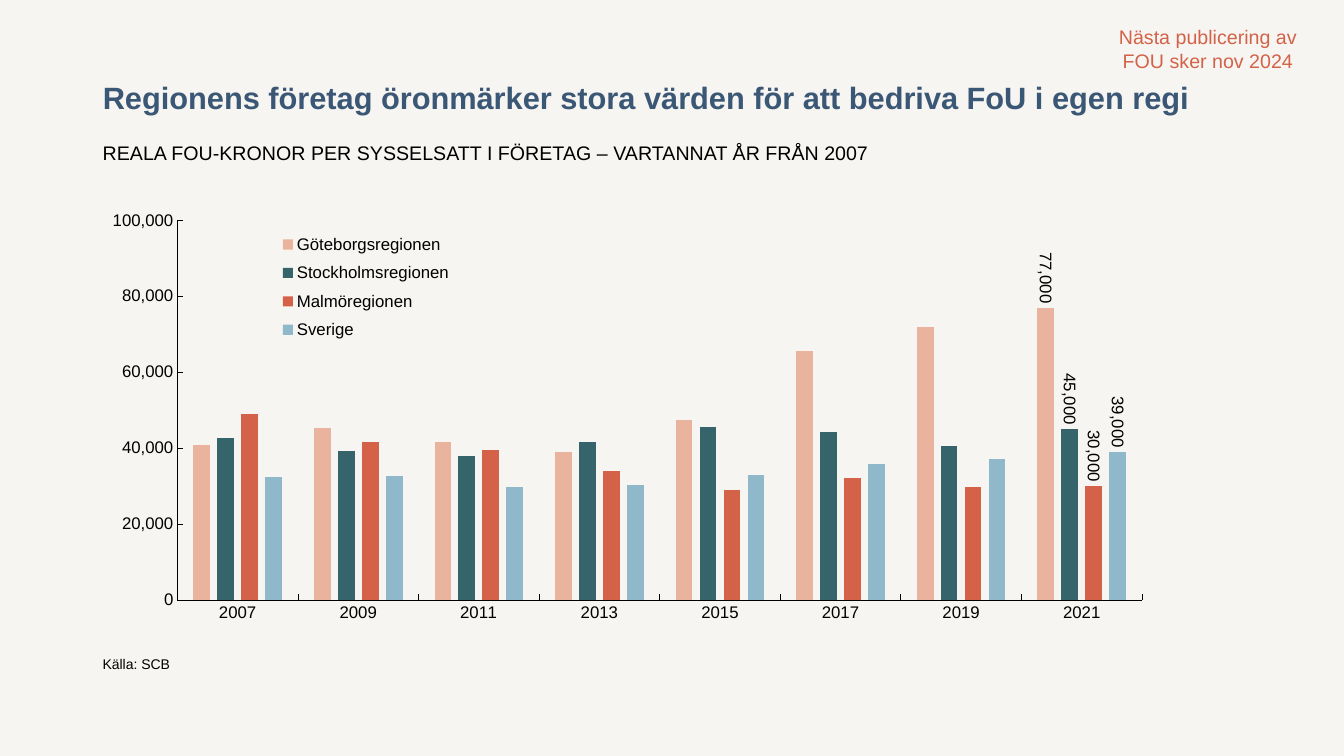
from lxml.etree import SubElement
from pptx import Presentation
from pptx.chart.data import CategoryChartData
from pptx.dml.color import RGBColor
from pptx.enum.chart import XL_CHART_TYPE, XL_LABEL_POSITION, XL_LEGEND_POSITION, XL_TICK_MARK
from pptx.enum.text import MSO_ANCHOR, MSO_AUTO_SIZE, PP_ALIGN
from pptx.oxml.ns import qn
from pptx.util import Inches, Pt

COLORS = {
    "background": "F6F5F1",
    "heading": "3B5776",
    "text": "000000",
    "Göteborgsregionen": "EAB39E",
    "Stockholmsregionen": "36646B",
    "Malmöregionen": "D36248",
    "Sverige": "8FB8CA",
}
YEARS = [str(year) for year in range(2007, 2022, 2)]
RND_PER_EMPLOYEE = {
    "Göteborgsregionen": (40829, 45243, 41458, 38942, 47379, 65492, 71788, 77000),
    "Stockholmsregionen": (42623, 39287, 37840, 41703, 45497, 44212, 40608, 45000),
    "Malmöregionen": (48859, 41520, 39418, 33877, 28856, 32075, 29826, 30000),
    "Sverige": (32275, 32748, 29726, 30148, 32855, 35767, 36974, 39000),
}
LEFT = 6.9  # shared left edge, percent of the slide's width


def color(name):
    return RGBColor.from_string(COLORS[name])


def set_layout(parent, position, **shares):
    """Place a chart part by shares of the chart; position is its child index."""
    layout = parent.find(qn("c:layout"))
    if layout is not None:
        parent.remove(layout)
    layout = SubElement(parent, qn("c:layout"))
    parent.insert(position, layout)
    manual = SubElement(layout, qn("c:manualLayout"))
    if parent.tag == qn("c:plotArea"):
        SubElement(manual, qn("c:layoutTarget"), val="inner")
    for mode in ("xMode", "yMode"):
        SubElement(manual, qn(f"c:{mode}"), val="edge")
    for side, share in shares.items():
        SubElement(manual, qn(f"c:{side}"), val=str(share))


class SlideBuilder:
    """Holds the style and the slide; boxes are percentages of the slide's size."""

    font_name = "Arial"

    def __init__(self, presentation):
        self.width = presentation.slide_width
        self.height = presentation.slide_height
        self.slide = presentation.slides.add_slide(presentation.slide_layouts[5])
        fill = self.slide.background.fill
        fill.solid()
        fill.fore_color.rgb = color("background")

    def box(self, left, top, width, height):
        return (int(self.width * left / 100), int(self.height * top / 100),
                int(self.width * width / 100), int(self.height * height / 100))

    def style_font(self, font, size, color_name="text", bold=False):
        font.name = self.font_name
        font.size = Pt(size)
        font.bold = bold
        font.color.rgb = color(color_name)

    def fill_frame(self, frame, wording, size, color_name, bold=False,
                   anchor=MSO_ANCHOR.TOP, align=PP_ALIGN.LEFT):
        frame.word_wrap = True
        frame.auto_size = MSO_AUTO_SIZE.NONE
        frame.vertical_anchor = anchor
        paragraph = frame.paragraphs[0]
        paragraph.alignment = align
        run = paragraph.add_run()
        run.text = wording
        self.style_font(run.font, size, color_name, bold)
        return paragraph

    def title(self, wording, box):
        heading = self.slide.shapes.title
        heading.left, heading.top, heading.width, heading.height = self.box(*box)
        paragraph = self.fill_frame(heading.text_frame, wording, 22, "heading", True,
                                    MSO_ANCHOR.BOTTOM)
        paragraph.line_spacing = Pt(31)

    def text(self, wording, box, size, color_name="text", **options):
        frame = self.slide.shapes.add_textbox(*self.box(*box)).text_frame
        self.fill_frame(frame, wording, size, color_name, **options)

    def column_chart(self, categories, series_values, box):
        data = CategoryChartData(number_format="#,##0")
        data.categories = categories
        for region, values in series_values.items():
            data.add_series(region, values)
        chart = self.slide.shapes.add_chart(
            XL_CHART_TYPE.COLUMN_CLUSTERED, *self.box(*box), data).chart
        chart.has_title = False
        self.style_font(chart.font, 12)
        self.style_axes(chart)
        plot = chart.plots[0]
        plot.vary_by_categories = False
        plot.gap_width = 191
        plot.overlap = -43
        for series in plot.series:
            series.format.fill.solid()
            series.format.fill.fore_color.rgb = color(series.name)
            self.label_last_point(series)
        plot_area = next(chart.element.iter(qn("c:plotArea")))
        set_layout(plot_area, 0, x=0.079, y=0.047, w=0.9, h=0.862)
        self.place_legend(chart)

    def style_axes(self, chart):
        for axis in (chart.category_axis, chart.value_axis):
            axis.has_major_gridlines = False
            axis.major_tick_mark = XL_TICK_MARK.INSIDE
            axis.minor_tick_mark = XL_TICK_MARK.NONE
            axis.format.line.width = Pt(0.5)
            axis.format.line.color.rgb = color("text")
            self.style_font(axis.tick_labels.font, 12)
        scale = chart.value_axis
        scale.minimum_scale, scale.maximum_scale, scale.major_unit = 0, 100000, 20000
        scale.tick_labels.number_format = "#,##0"
        scale.tick_labels.number_format_is_linked = False

    def label_last_point(self, series):
        """Show only the last value, turned to read downwards."""
        series.data_labels.show_value = False
        label = series.points[len(series.values) - 1].data_label
        self.style_font(label.font, 12)
        label.position = XL_LABEL_POSITION.OUTSIDE_END
        for label_xml in series.format.element.iter(qn("c:dLbl")) if hasattr(
                series.format, "element") else series._element.iter(qn("c:dLbl")):
            body = next(label_xml.iter(qn("a:bodyPr")))
            body.set("rot", "5400000")
            body.set("vert", "horz")

    def place_legend(self, chart):
        chart.has_legend = True
        legend = chart.legend
        legend.position = XL_LEGEND_POSITION.RIGHT
        legend.include_in_layout = False
        self.style_font(legend.font, 12)
        set_layout(next(chart.element.iter(qn("c:legend"))), 1, x=0.155, y=0.058, w=0.2, h=0.282)


def main():
    presentation = Presentation()
    presentation.slide_width, presentation.slide_height = Inches(13.33), Inches(7.5)
    builder = SlideBuilder(presentation)
    builder.title("Regionens företag öronmärker stora värden för att bedriva FoU i egen regi",
                  (LEFT, 5.33, 86.27, 10.67))
    builder.text("REALA FOU-KRONOR PER SYSSELSATT I FÖRETAG – VARTANNAT ÅR FRÅN 2007",
                 (LEFT, 18, 86.27, 6.8), 14)
    builder.text("Källa: SCB", (LEFT, 86, 80.95, 3.6), 10, anchor=MSO_ANCHOR.BOTTOM)
    builder.column_chart(YEARS, RND_PER_EMPLOYEE, (LEFT, 26.4, 79.75, 58.27))
    builder.text("Nästa publicering av FOU sker nov 2024", (81.4, 2.67, 16.95, 7.6), 14,
                 "Malmöregionen", align=PP_ALIGN.CENTER)
    presentation.save("out.pptx")


if __name__ == "__main__":
    main()
